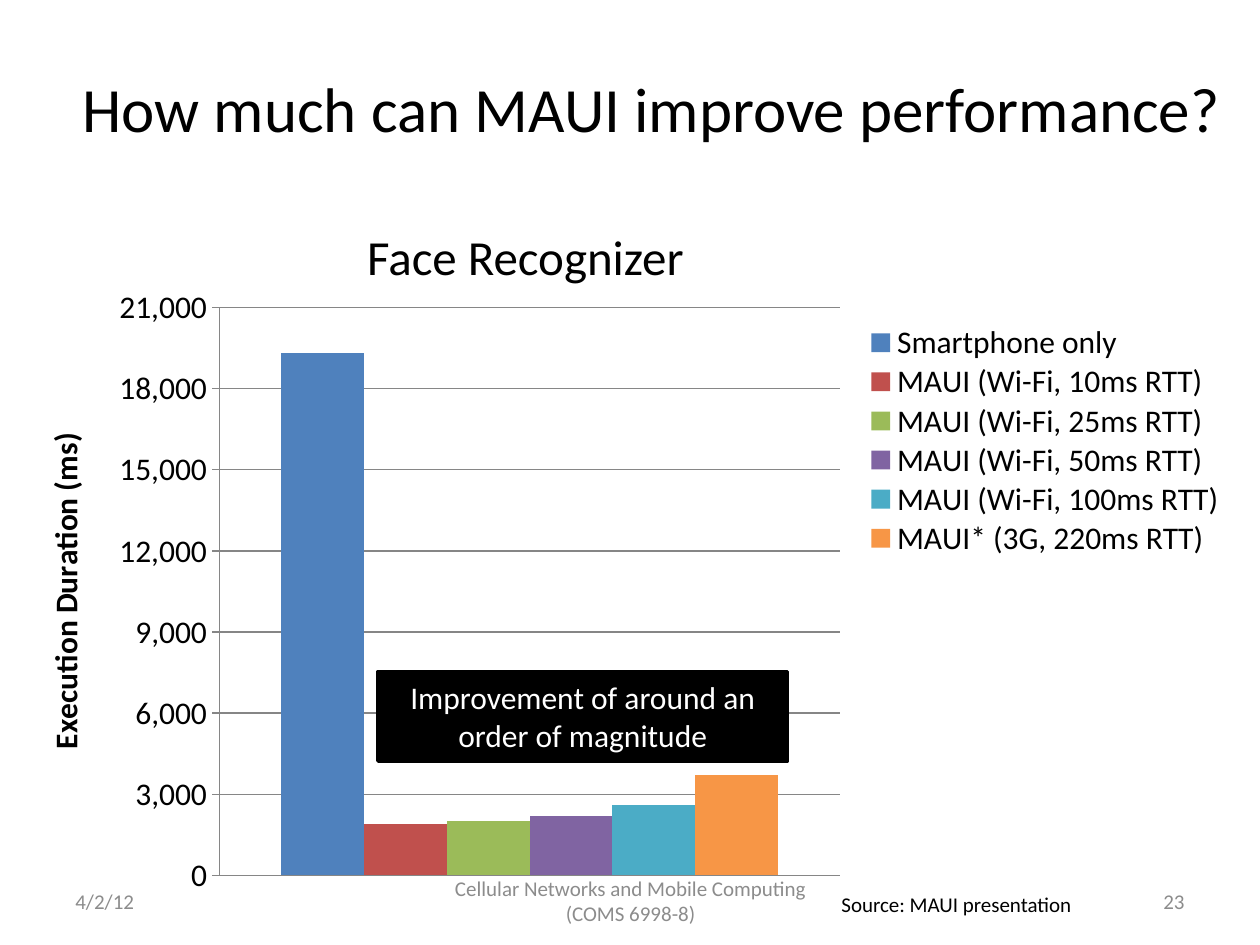
from dataclasses import dataclass

from lxml.etree import SubElement
from pptx import Presentation
from pptx.chart.data import CategoryChartData
from pptx.dml.color import RGBColor
from pptx.enum.chart import XL_CHART_TYPE as Chart
from pptx.enum.chart import XL_LEGEND_POSITION as Legend
from pptx.enum.chart import XL_TICK_LABEL_POSITION as TickLabel
from pptx.enum.chart import XL_TICK_MARK as Tick
from pptx.enum.shapes import MSO_SHAPE as Shape
from pptx.enum.text import MSO_ANCHOR as Anchor
from pptx.enum.text import PP_ALIGN as Align
from pptx.oxml.ns import qn
from pptx.util import Inches, Pt

FONT = "Calibri"
BLACK = RGBColor(0x00, 0x00, 0x00)
WHITE = RGBColor(0xFF, 0xFF, 0xFF)
GRAY = RGBColor(0x8C, 0x8C, 0x8C)
GRID = RGBColor(0x86, 0x86, 0x86)


@dataclass
class Label:
    text: str
    box: tuple[float, float, float, float]
    size: int = 12
    color: RGBColor = BLACK
    align: Align = Align.LEFT
    anchor: Anchor = Anchor.TOP
    wrap: bool = True


@dataclass
class Bar:
    name: str
    duration: int
    color: RGBColor


BARS = [
    Bar("Smartphone only", 19300, RGBColor(0x4F, 0x81, 0xBD)),
    Bar("MAUI (Wi-Fi, 10ms RTT)", 1900, RGBColor(0xC0, 0x50, 0x4D)),
    Bar("MAUI (Wi-Fi, 25ms RTT)", 2000, RGBColor(0x9B, 0xBB, 0x59)),
    Bar("MAUI (Wi-Fi, 50ms RTT)", 2200, RGBColor(0x80, 0x64, 0xA2)),
    Bar("MAUI (Wi-Fi, 100ms RTT)", 2600, RGBColor(0x4B, 0xAC, 0xC6)),
    Bar("MAUI* (3G, 220ms RTT)", 3700, RGBColor(0xF7, 0x96, 0x46)),
]
TITLE = Label("How much can MAUI improve performance?", (0.17, 0.17, 10, 1.37),
              36, align=Align.CENTER, anchor=Anchor.MIDDLE)
CALLOUT = Label("Improvement of around an order of magnitude", (3, 5.33, 3.25, 0.71),
                18, WHITE, Align.CENTER)
LABELS = [
    Label("Face Recognizer", (1.67, 1.75, 5, 0.57), 28, align=Align.CENTER),
    Label("Source: MAUI presentation", (6.58, 7.03, 2.06, 0.3), wrap=False),
    Label("4/2/12", (0.5, 6.95, 2.33, 0.4), color=GRAY, anchor=Anchor.MIDDLE),
    Label("Cellular Networks and Mobile Computing (COMS 6998-8)", (3.42, 6.95, 3.17, 0.4),
          color=GRAY, align=Align.CENTER, anchor=Anchor.MIDDLE),
    Label("23", (7.17, 6.95, 2.33, 0.4), color=GRAY, align=Align.RIGHT, anchor=Anchor.MIDDLE),
]


def style_font(font, size: int, color: RGBColor) -> None:
    font.name, font.size = FONT, Pt(size)
    font.color.rgb = color


def write(tf, label: Label) -> None:
    tf.word_wrap = label.wrap
    tf.vertical_anchor = label.anchor
    p = tf.paragraphs[0]
    p.alignment = label.align
    r = p.add_run()
    r.text = label.text
    style_font(r.font, label.size, label.color)


def add_label(s, label: Label) -> None:
    write(s.shapes.add_textbox(*map(Inches, label.box)).text_frame, label)


def add_callout(s, label: Label) -> None:
    sp = s.shapes.add_shape(Shape.RECTANGLE, *map(Inches, label.box))
    sp.shadow.inherit = False
    sp.fill.solid()
    sp.fill.fore_color.rgb = BLACK
    sp.line.color.rgb = BLACK
    sp.line.width = Pt(2)
    write(sp.text_frame, label)


def set_layout(parent, index: int, inner: bool, x: float, y: float, w: float, h: float) -> None:
    """Fix a chart part's place, in fractions of the chart area."""
    for old in parent.findall(qn("c:layout")):
        parent.remove(old)
    layout = SubElement(parent, qn("c:layout"))
    parent.insert(index, layout)
    manual = SubElement(layout, qn("c:manualLayout"))
    settings = {"layoutTarget": "inner"} if inner else {}
    settings |= {"xMode": "edge", "yMode": "edge", "x": x, "y": y, "w": w, "h": h}
    for tag, value in settings.items():
        SubElement(manual, qn(f"c:{tag}")).set("val", str(value))


def add_duration_chart(s) -> None:
    data = CategoryChartData(number_format="#,##0")
    data.categories = ["1"]
    for bar in BARS:
        data.add_series(bar.name, [bar.duration])
    box = map(Inches, (0.25, 2.29, 9.75, 5.21))
    chart = s.shapes.add_chart(Chart.COLUMN_CLUSTERED, *box, data).chart
    chart.has_title = False
    style_font(chart.font, 18, BLACK)

    plot = chart.plots[0]
    plot.gap_width, plot.overlap = 150, 0
    plot.vary_by_categories = False
    for series, bar in zip(plot.series, BARS):
        series.format.fill.solid()
        series.format.fill.fore_color.rgb = bar.color

    chart.category_axis.visible = False
    axis = chart.value_axis
    axis.minimum_scale, axis.maximum_scale, axis.major_unit = 0, 21000, 3000
    axis.major_tick_mark = Tick.OUTSIDE
    axis.tick_label_position = TickLabel.LOW
    axis.tick_labels.number_format = "#,##0"
    axis.tick_labels.number_format_is_linked = False
    axis.has_major_gridlines = True
    for line in (axis.format.line, axis.major_gridlines.format.line):
        line.color.rgb = GRID
        line.width = Pt(0.75)
    r = axis.axis_title.text_frame.paragraphs[0].add_run()
    r.text = "Execution Duration (ms)"
    style_font(r.font, 18, BLACK)
    r.font.bold = True

    chart.has_legend = True
    legend = chart.legend
    legend.position = Legend.RIGHT
    legend.include_in_layout = False
    style_font(legend.font, 18, BLACK)
    plot_area = chart.element.find(".//" + qn("c:plotArea"))
    set_layout(plot_area, 0, True, 0.153, 0.027, 0.505, 0.867)
    set_layout(chart.element.find(".//" + qn("c:legend")), 1, False, 0.66, 0.05, 0.33, 0.36)


def main() -> None:
    prs = Presentation()
    prs.slide_width, prs.slide_height = Inches(10), Inches(7.5)
    s = prs.slides.add_slide(prs.slide_layouts[6])
    add_label(s, TITLE)
    add_duration_chart(s)
    add_callout(s, CALLOUT)
    for label in LABELS:
        add_label(s, label)
    prs.save("out.pptx")


if __name__ == "__main__":
    main()
